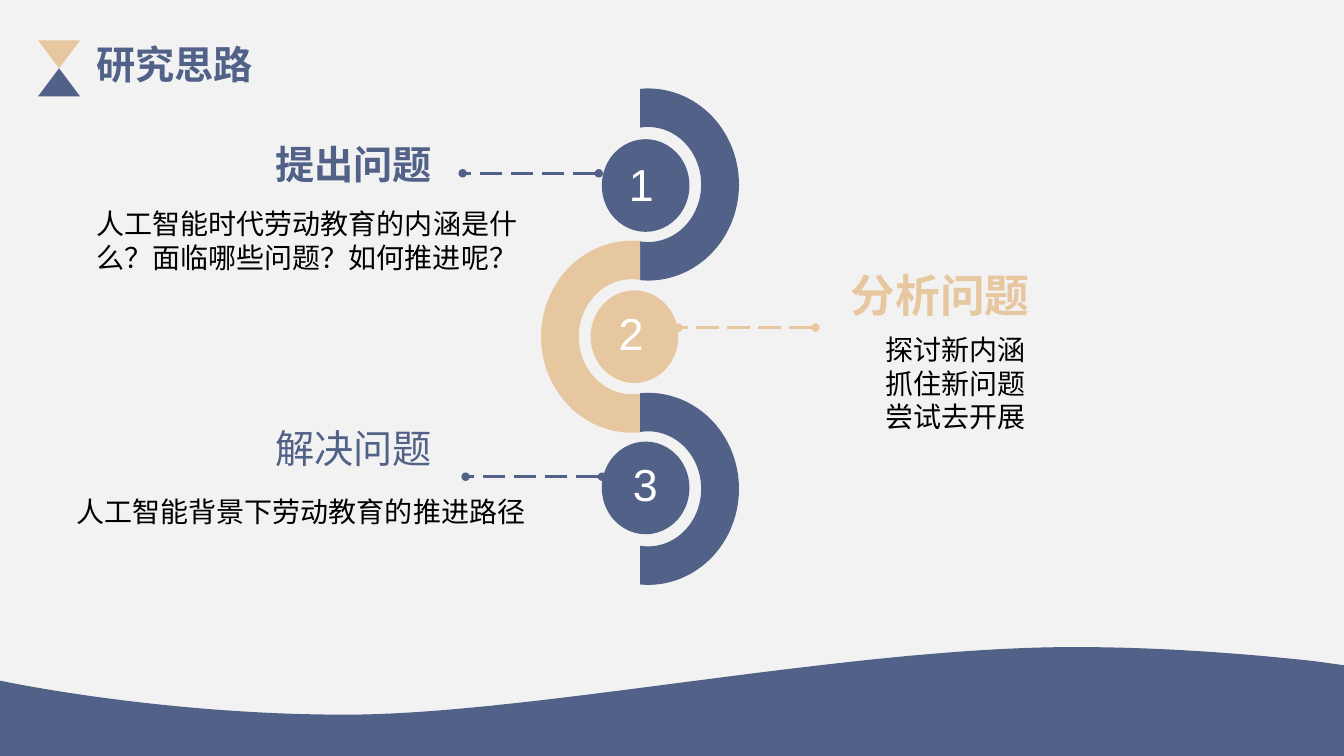
from math import asin, cos, sin

from lxml.etree import SubElement
from pptx import Presentation
from pptx.dml.color import RGBColor
from pptx.enum.dml import MSO_LINE
from pptx.enum.shapes import MSO_CONNECTOR, MSO_SHAPE
from pptx.enum.text import PP_ALIGN
from pptx.oxml.ns import qn
from pptx.util import Pt

BLUE = RGBColor(0x52, 0x61, 0x88)
SAND = RGBColor(0xE7, 0xC7, 0xA0)
PALE = RGBColor(0xF2, 0xF2, 0xF2)
WHITE = RGBColor(0xFF, 0xFF, 0xFF)
BLACK = RGBColor(0, 0, 0)
CJK = "Noto Sans CJK SC"
LEFT, RIGHT = PP_ALIGN.LEFT, PP_ALIGN.RIGHT


def paint(sp, color):
    """Give a shape a flat fill without line or shadow."""
    sp.shadow.inherit = False
    sp.fill.solid()
    sp.fill.fore_color.rgb = color
    sp.line.fill.background()


def add_preset(slide, kind, box, color, rotation=0):
    """Add a flat preset shape."""
    sp = slide.shapes.add_shape(kind, *map(Pt, box))
    sp.rotation = rotation
    paint(sp, color)


def add_outline(slide, points, color):
    """Add a closed flat outline through the points."""
    points = [(Pt(x), Pt(y)) for x, y in points]
    builder = slide.shapes.build_freeform(*points[0], scale=1.0)
    builder.add_line_segments(points[1:], close=True)
    paint(builder.convert_to_shape(), color)


def add_text(slide, box, lines, color, size, name=CJK, bold=False, align=LEFT):
    """Add a wrapped text box with one paragraph per line."""
    tf = slide.shapes.add_textbox(*map(Pt, box)).text_frame
    tf.word_wrap = True
    font_format = {"size": Pt(size), "name": name, "bold": bold}
    for i, line in enumerate(lines):
        p = tf.paragraphs[0] if i == 0 else tf.add_paragraph()
        p.alignment = align
        r = p.add_run()
        r.text = line
        for key, value in font_format.items():
            setattr(r.font, key, value)
        r.font.color.rgb = color
        SubElement(r.font._element, qn("a:ea"), typeface=name)


def add_dash(slide, x1, x2, y, color):
    """Add a horizontal dashed line with a dot at both ends."""
    sp = slide.shapes.add_connector(MSO_CONNECTOR.STRAIGHT, Pt(x1), Pt(y), Pt(x2), Pt(y))
    for key, value in {"width": Pt(2), "dash_style": MSO_LINE.LONG_DASH}.items():
        setattr(sp.line, key, value)
    sp.line.color.rgb = color
    ln = sp.line._get_or_add_ln()
    for end in ("a:headEnd", "a:tailEnd"):
        SubElement(ln, qn(end), type="oval")
    SubElement(sp._element.spPr, qn("a:effectLst"))


def bezier(p0, p1, p2, p3, steps=40):
    """Return points along a cubic curve."""
    ts = [i / steps for i in range(steps + 1)]
    return [
        tuple(
            a * (1 - t) ** 3 + 3 * b * t * (1 - t) ** 2 + 3 * c * t * t * (1 - t) + d * t ** 3
            for a, b, c, d in zip(p0, p1, p2, p3)
        )
        for t in ts
    ]


def build_wave(slide, box):
    """Draw the wave along the foot of the slide."""
    x, y, w, h = box
    crest, trough = (767, 0), (247, 48.3)
    curve = bezier(crest, (605, 0), (380, 48.3), trough)
    curve += bezier(trough, (113, 48.3), (0, 24), (0, 24))
    curve += [(0, h), (w, h), (w, 13)]
    curve += bezier((939, 10.1), (887, 4.4), (827, 0), crest)
    add_outline(slide, [(x + px, y + py) for px, py in curve], BLUE)


def build_header(slide, box):
    """Draw the hourglass mark and the slide title."""
    x, y, w, h = box
    half = h / 2
    add_preset(slide, MSO_SHAPE.ISOSCELES_TRIANGLE, (x, y + half, 30, half), BLUE)
    add_preset(slide, MSO_SHAPE.ISOSCELES_TRIANGLE, (x, y, 30, half), SAND, 180)
    add_text(slide, (x + 34.6, y - 3.6, w - 34.6, 41), ["研究思路"], BLUE, 28, "Arial", True)


def build_half_ring(slide, box, side, color):
    """Draw a half ring bulging to the side, 1 for right and -1 for left."""
    x, y, w, h = box
    spine = x if side > 0 else x + w
    inset, cy, thick = 5.8, y + h / 2, 27.5
    arcs = []
    for rx, ry in ((w - inset, h / 2), (w - inset - 27, h / 2 - thick)):
        limit = asin(1) + asin(inset / rx)
        angles = [limit * (i / 30 - 1) for i in range(61)]
        arcs.append([(spine + side * (inset + rx * cos(a)), cy + ry * sin(a)) for a in angles])
    add_outline(slide, arcs[0] + arcs[1][::-1], color)


def build_spine(slide, box, steps):
    """Draw the chain of half rings with their discs."""
    x, y, w, h = box
    spine, ring_w, ring_h = x + w / 2, w / 2, 137.2
    pitch = (h - ring_h) / (len(steps) - 1)
    for i, step in enumerate(steps):
        left = spine if step["side"] > 0 else spine - ring_w
        ring = (left, y + i * pitch, ring_w, ring_h)
        build_half_ring(slide, ring, step["side"], step["color"])
    for i, step in enumerate(steps):
        cx = spine + 4 * step["side"]
        cy = y + h / 2 + 108 * (i - 1)
        add_preset(slide, MSO_SHAPE.OVAL, (cx - 31.3, cy - 33.1, 62.6, 66.2), step["color"])
        dx, dy = step["digit"]
        add_text(slide, (cx + dx, cy + dy, 39, 46), [str(i + 1)], WHITE, 32, "Arial")


def build_callout(slide, box, step):
    """Write the heading and body of a step and its dashed link."""
    x, y = box[:2]
    color, align = step["color"], step["align"]
    for key, fmt in (
        ("heading", {"color": color, "size": step["size"], "bold": step["bold"], "align": align}),
        ("body", {"color": BLACK, "size": 20, "align": step["body_align"]}),
    ):
        dx, dy, w, h, lines = step[key]
        add_text(slide, (x + dx, y + dy, w, h), lines, **fmt)
    x1, x2, dy = step["dash"]
    add_dash(slide, x + x1, x + x2, y + dy, color)


STEPS = [
    {
        "side": 1, "color": BLUE, "digit": (-19, -23.8), "box": (50, 97, 380, 103),
        "size": 28, "bold": True, "align": RIGHT, "body_align": RIGHT,
        "heading": (130, 0, 135.4, 41, ["提出问题"]),
        "body": (0.4, 47, 326.2, 55.4, ["人工智能时代劳动教育的内涵是什么？面临哪些问题？如何推进呢？"]),
        "dash": (377.7, 280.5, 26.8),
    },
    {
        "side": -1, "color": SAND, "digit": (-18.4, -25.9), "box": (600, 188, 283, 126),
        "size": 32, "bold": True, "align": LEFT, "body_align": LEFT,
        "heading": (0.5, 0, 270.7, 46, ["分析问题"]),
        "body": (25.7, 46, 257, 80, ["探讨新内涵", "抓住新问题", "尝试去开展"]),
        "dash": (-17.5, -115.4, 46),
    },
    {
        "side": 1, "color": BLUE, "digit": (-16.2, -26), "box": (43, 299.5, 387, 82),
        "size": 28, "bold": False, "align": RIGHT, "body_align": LEFT,
        "heading": (137, 0, 135.4, 41, ["解决问题"]),
        "body": (4.6, 50.4, 354, 32, ["人工智能背景下劳动教育的推进路径"]),
        "dash": (387, 289.6, 41),
    },
]


def main():
    """Build and save the slide."""
    prs = Presentation()
    prs.slide_width, prs.slide_height = Pt(960), Pt(540)
    slide = prs.slides.add_slide(prs.slide_layouts[6])
    slide.background.fill.solid()
    slide.background.fill.fore_color.rgb = PALE
    build_wave(slide, (0, 462.2, 960, 77.8))
    build_header(slide, (27.2, 28.8, 164, 40))
    build_spine(slide, (386.5, 63.2, 141.4, 354.6), STEPS)
    for step in STEPS:
        build_callout(slide, step["box"], step)
    prs.save("out.pptx")


if __name__ == "__main__":
    main()
